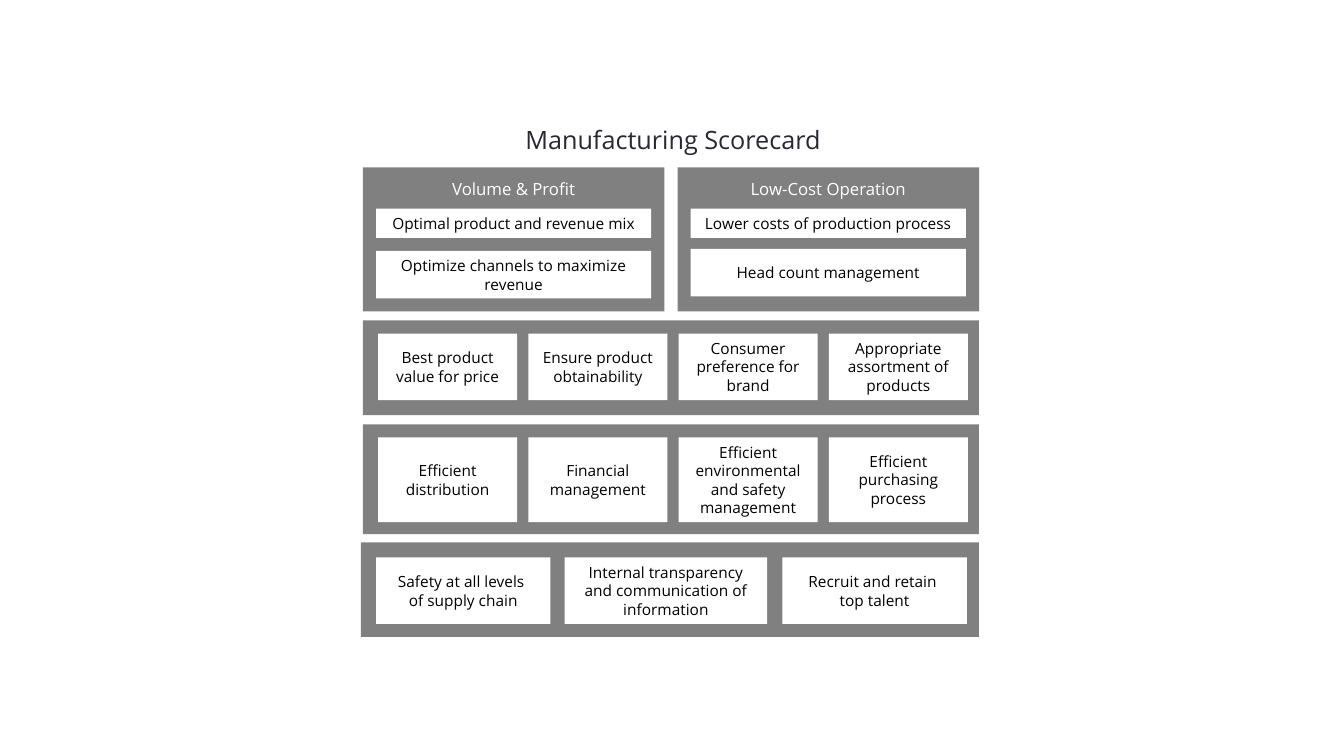
import pptx
import pptx.util
import pptx.dml.color
import pptx.enum.shapes
import pptx.enum.text

Inches = pptx.util.Inches
COLORS = {"panel": "808080", "card": "FFFFFF", "title": "282832",
          "head": "FFFFFF", "text": "000000"}


class Board:
    def __init__(self, slide, font):
        self.slide = slide
        self.font = font

    def color(self, name):
        return pptx.dml.color.RGBColor.from_string(COLORS[name])

    def label(self, shape, text, size, color):
        """Centre the text in the shape; a newline becomes a line break."""
        frame = shape.text_frame
        frame.word_wrap = True
        frame.auto_size = pptx.enum.text.MSO_AUTO_SIZE.NONE
        frame.vertical_anchor = pptx.enum.text.MSO_ANCHOR.MIDDLE
        para = frame.paragraphs[0]
        para.alignment = pptx.enum.text.PP_ALIGN.CENTER
        for i, line in enumerate(text.split("\n")):
            if i:
                para.add_line_break()
            run = para.add_run()
            run.text = line
            run.font.name = self.font
            run.font.size = pptx.util.Pt(size)
            run.font.color.rgb = self.color(color)

    def title(self, text, left, top, width, height):
        shape = self.slide.shapes.title
        shape.left, shape.top = Inches(left), Inches(top)
        shape.width, shape.height = Inches(width), Inches(height)
        self.label(shape, text, 18, "title")

    def block(self, fill, left, top, width, height):
        shape = self.slide.shapes.add_shape(
            pptx.enum.shapes.MSO_SHAPE.RECTANGLE,
            Inches(left), Inches(top), Inches(width), Inches(height))
        shape.shadow.inherit = False
        shape.fill.solid()
        shape.fill.fore_color.rgb = self.color(fill)
        shape.line.fill.background()
        return shape

    def panel(self, left, top, width, height):
        self.block("panel", left, top, width, height)

    def card(self, text, left, top, width, height):
        shape = self.block("card", left, top, width, height)
        self.label(shape, text, 11, "text")

    def head(self, text, left, top, width, height):
        shape = self.slide.shapes.add_textbox(
            Inches(left), Inches(top), Inches(width), Inches(height))
        self.label(shape, text, 12, "head")


GOALS = [
    (3.6, "Volume & Profit", "Optimal product and revenue mix",
     "Optimize channels to maximize revenue", 2.49),
    (6.72, "Low-Cost Operation", "Lower costs of production process",
     "Head count management", 2.47),
]
# Panel top and height, card height, card texts
ROWS = [
    (3.18, 0.94, 0.66, ["Best product value for price", "Ensure product obtainability",
                        "Consumer preference for brand",
                        "Appropriate assortment of products"]),
    (4.21, 1.09, 0.84, ["Efficient distribution", "Financial management",
                        "Efficient environmental and safety management",
                        "Efficient purchasing process"]),
]
BASE = [
    ("Safety at all levels \nof supply chain", 3.73, 1.73),
    ("Internal transparency and communication of information", 5.6, 2.01),
    ("Recruit and retain \ntop talent", 7.76, 1.83),
]


def main():
    deck = pptx.Presentation()
    deck.slide_width, deck.slide_height = Inches(13.33), Inches(7.5)
    board = Board(deck.slides.add_slide(deck.slide_layouts[5]), "Open Sans")

    board.title("Manufacturing Scorecard", 3.6, 1.18, 6.15, 0.4)
    for left, head, first, second, top in GOALS:
        board.panel(left, 1.66, 2.99, 1.43)
        inner = left + 0.13
        board.head(head, inner, 1.72, 2.73, 0.3)
        board.card(first, inner, 2.07, 2.73, 0.29)
        board.card(second, inner, top, 2.73, 0.47)

    for top, height, tall, texts in ROWS:
        board.panel(3.6, top, 6.11, height)
        for i, text in enumerate(texts):
            board.card(text, 3.75 + i * 1.49, top + 0.13, 1.38, tall)

    board.panel(3.58, 5.38, 6.13, 0.94)
    for text, left, width in BASE:
        board.card(text, left, 5.53, width, 0.66)

    deck.save("out.pptx")


if __name__ == "__main__":
    main()
